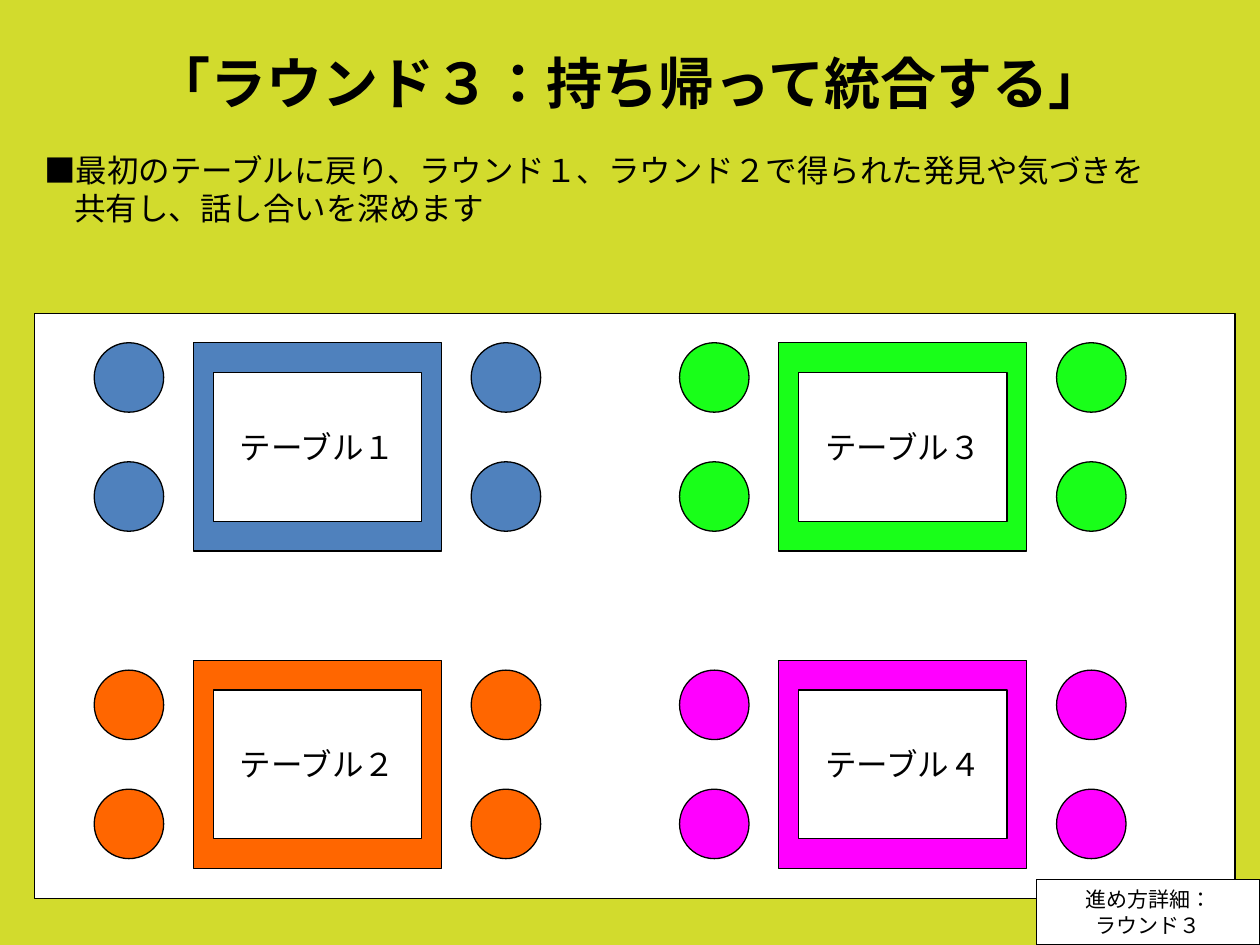
"""Build the slide that shows how round three of the table talk is seated."""
from dataclasses import dataclass
from itertools import product

from lxml.etree import SubElement
from pptx import Presentation
from pptx.dml.color import RGBColor
from pptx.enum.lang import MSO_LANGUAGE_ID
from pptx.enum.shapes import MSO_SHAPE
from pptx.enum.text import MSO_ANCHOR, MSO_AUTO_SIZE, PP_ALIGN
from pptx.oxml.ns import qn
from pptx.util import Cm, Pt


@dataclass(frozen=True)
class Theme:
    """Colours, fonts and type sizes of the slide."""
    background: str = "D2DB2D"
    ink: str = "000000"
    paper: str = "FFFFFF"
    blue: str = "4F81BD"
    orange: str = "FF6600"
    green: str = "00FF00"
    magenta: str = "FF00FF"
    title_font: str = "Noto Sans CJK JP"
    body_font: str = "Arial"
    title_size: int = 32
    body_size: int = 18
    note_size: int = 12
    line_width: float = 0.75


THEME = Theme()


def place(shape, left, top, width, height):
    """Move and size a shape, in centimetres."""
    shape.left, shape.top = Cm(left), Cm(top)
    shape.width, shape.height = Cm(width), Cm(height)


def format_runs(text_frame, size, font_name, bold=False):
    """Give every run of a text frame the same type."""
    for paragraph in text_frame.paragraphs:
        for run in paragraph.runs:
            run.font.size = Pt(size)
            run.font.name = font_name
            run.font.bold = bold
            run.font.language_id = MSO_LANGUAGE_ID.JAPANESE
            run.font.color.rgb = RGBColor.from_string(THEME.ink)


def add_title(slide, text):
    """Fill the title placeholder."""
    title = slide.shapes.title
    place(title, 1.27, 0.76, 22.86, 3.18)
    text_frame = title.text_frame
    text_frame.text = text
    text_frame.word_wrap = True
    text_frame.auto_size = MSO_AUTO_SIZE.NONE
    text_frame.vertical_anchor = MSO_ANCHOR.MIDDLE
    text_frame.margin_bottom = Cm(1.5)
    text_frame.paragraphs[0].alignment = PP_ALIGN.CENTER
    format_runs(text_frame, THEME.title_size, THEME.title_font, bold=True)
    for run in text_frame.paragraphs[0].runs:
        SubElement(run.font._element, qn("a:ea"), typeface=THEME.title_font)


def add_instruction(slide, marker, lines):
    """Fill the body placeholder, its lines aligned after a bold marker."""
    body = slide.placeholders[1]
    place(body, 0.64, 2.92, 22.73, 2.54)
    text_frame = body.text_frame
    text_frame.text = "\n".join(lines)
    text_frame.word_wrap = False
    text_frame.auto_size = MSO_AUTO_SIZE.NONE
    first = text_frame.paragraphs[0]
    first.text = marker
    first.add_run().text = lines[0]
    format_runs(text_frame, THEME.body_size, THEME.body_font)
    first.runs[0].font.bold = True
    for paragraph, margin in zip(text_frame.paragraphs, (0, 0.6)):
        paragraph.space_before = Pt(0)
        properties = paragraph._p.get_or_add_pPr()
        properties.set("marL", str(int(Cm(margin))))
        properties.set("indent", "0")
        SubElement(properties, qn("a:buNone"))


def add_figure(slide, kind, box, color, opacity=100):
    """Add a filled, thinly outlined shape."""
    shape = slide.shapes.add_shape(kind, *map(Cm, box))
    shape.shadow.inherit = False
    shape.fill.solid()
    shape.fill.fore_color.rgb = RGBColor.from_string(color)
    shape.line.color.rgb = RGBColor.from_string(THEME.ink)
    shape.line.width = Pt(THEME.line_width)
    if opacity < 100:
        color_element = shape._element.spPr.find(qn("a:solidFill"))[0]
        SubElement(color_element, qn("a:alpha"), val=str(opacity * 1000))
    return shape


def add_label(slide, box, text, size):
    """Add a white rectangle with centred text."""
    label = add_figure(slide, MSO_SHAPE.RECTANGLE, box, THEME.paper)
    text_frame = label.text_frame
    text_frame.text = text
    text_frame.word_wrap = False
    text_frame.vertical_anchor = MSO_ANCHOR.MIDDLE
    for paragraph in text_frame.paragraphs:
        paragraph.alignment = PP_ALIGN.CENTER
    format_runs(text_frame, size, THEME.body_font)


def add_seating(slide, left, top, name, color, opacity, chair_drop):
    """Add a table with its name and two chairs on either side."""
    add_figure(slide, MSO_SHAPE.RECTANGLE, (left, top, 5, 4.2), color, opacity)
    for offset, row in product((-2, 5.6), range(2)):
        box = (left + offset, top + chair_drop + row * 2.4, 1.4, 1.4)
        add_figure(slide, MSO_SHAPE.OVAL, box, color, opacity)
    add_label(slide, (left + 0.4, top + 0.6, 4.2, 3), name, THEME.body_size)


def main():
    """Build and save the slide."""
    presentation = Presentation()
    presentation.slide_width, presentation.slide_height = Cm(25.4), Cm(19.05)
    slide = presentation.slides.add_slide(presentation.slide_layouts[1])
    slide.background.fill.solid()
    slide.background.fill.fore_color.rgb = RGBColor.from_string(THEME.background)

    add_title(slide, "「ラウンド３：持ち帰って統合する」")
    add_instruction(slide, "■", (
        "最初のテーブルに戻り、ラウンド１、ラウンド２で得られた発見や気づきを",
        "共有し、話し合いを深めます",
    ))
    add_figure(slide, MSO_SHAPE.RECTANGLE, (0.69, 6.32, 24.21, 11.79), THEME.paper)
    tables = (
        ("テーブル１", THEME.blue, 100),
        ("テーブル２", THEME.orange, 100),
        ("テーブル３", THEME.green, 90),
        ("テーブル４", THEME.magenta, 100),
    )
    for index, (name, color, opacity) in enumerate(tables):
        column, row = divmod(index, 2)
        add_seating(slide, 3.9 + column * 11.8, 6.91 + row * 6.4,
                    name, color, opacity, chair_drop=row * 0.2)
    add_label(slide, (20.9, 17.73, 4.5, 1.32), "進め方詳細：\nラウンド３", THEME.note_size)
    presentation.save("out.pptx")


if __name__ == "__main__":
    main()
